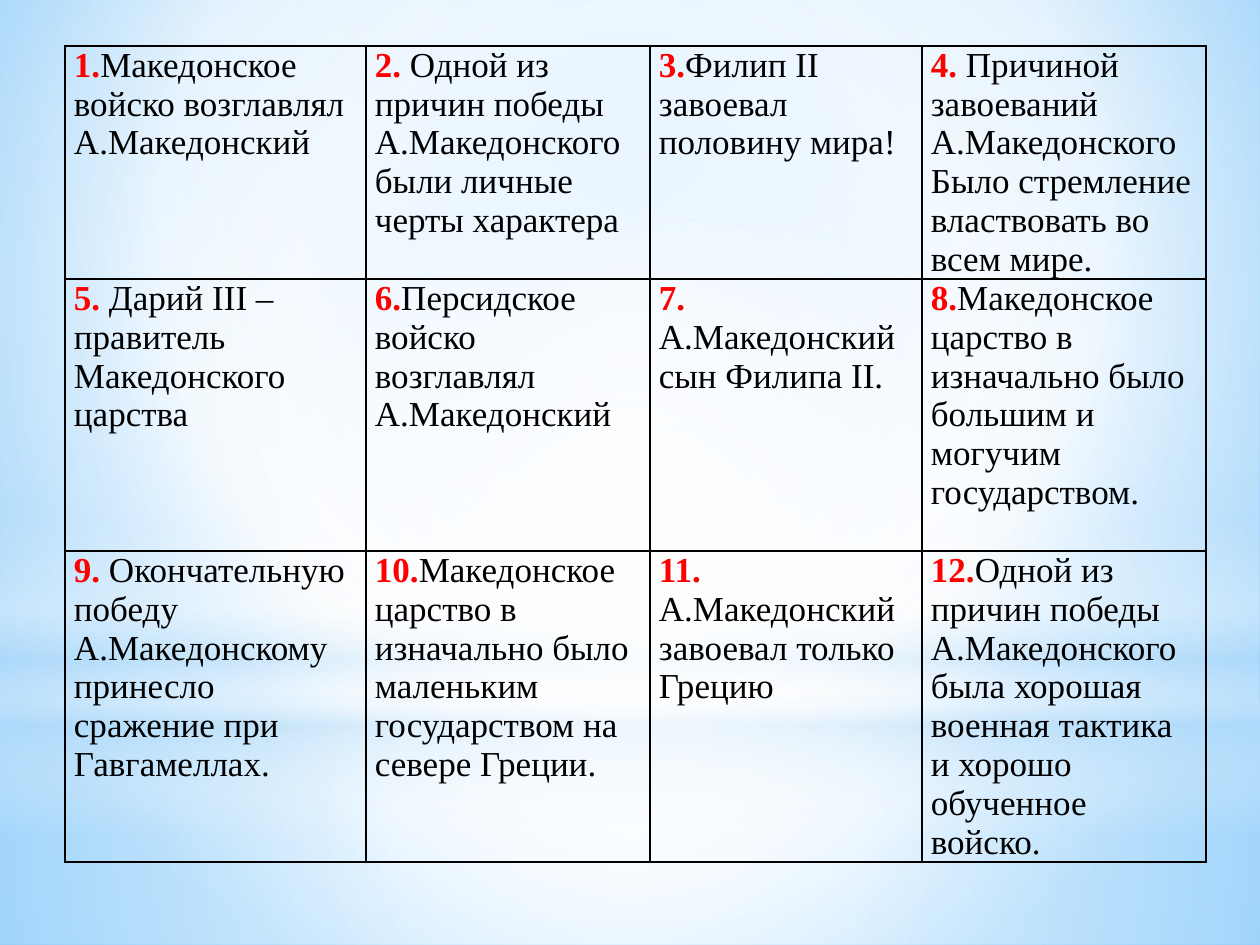
from lxml import etree
from pptx import Presentation
from pptx.dml.color import RGBColor
from pptx.enum.shapes import MSO_SHAPE
from pptx.oxml.ns import qn
from pptx.util import Pt

RECTANGLE = MSO_SHAPE.RECTANGLE
OVAL = MSO_SHAPE.OVAL
EMU_PER_PX = 914400 / 126
SLIDE_WIDTH, SLIDE_HEIGHT = 1260, 945

BLACK = RGBColor(0x00, 0x00, 0x00)
RED = RGBColor(0xFF, 0x00, 0x00)
WHITE = RGBColor(0xFF, 0xFF, 0xFF)
PALE_BLUE = RGBColor(0xB4, 0xDC, 0xFA)
LIGHT_BLUE = RGBColor(0x9E, 0xD5, 0xFF)
SKY_BLUE = RGBColor(0x5B, 0xB9, 0xFF)

CENTER = (50, 50, 50, 50)
COLUMN_WIDTHS = [301, 284, 272, 284]
ROW_HEIGHTS = [233, 272, 311]

# Each statement follows its number; a line break starts a new paragraph.
STATEMENTS = [
    "Македонское войско возглавлял А.Македонский",
    " Одной из причин победы А.Македонского были личные черты характера",
    "Филип II завоевал половину мира!",
    " Причиной завоеваний А.Македонского\nБыло стремление властвовать во всем мире.",
    " Дарий III – правитель Македонского царства",
    "Персидское войско возглавлял А.Македонский",
    "\nА.Македонский сын Филипа II.",
    "Македонское царство в изначально было большим и могучим государством.",
    " Окончательную победу А.Македонскому принесло сражение при Гавгамеллах.",
    "Македонское царство в изначально было маленьким государством на севере Греции.",
    " А.Македонский завоевал только Грецию",
    "Одной из причин победы А.Македонского была хорошая военная тактика и хорошо "
    "обученное войско.",
]


def px(length):
    return round(length * EMU_PER_PX)


def set_gradient(fill, element, stops, focus=None):
    """Stops are (position, colour, opacity) in percent; without a focus the gradient runs down."""
    fill.solid()
    solid = next(element.iter(qn("a:solidFill")))
    gradient = etree.Element(qn("a:gradFill"), rotWithShape="1")
    stop_list = etree.SubElement(gradient, qn("a:gsLst"))
    for position, color, opacity in stops:
        stop = etree.SubElement(stop_list, qn("a:gs"), pos=str(position * 1000))
        rgb = etree.SubElement(stop, qn("a:srgbClr"), val=str(color))
        if opacity < 100:
            etree.SubElement(rgb, qn("a:alpha"), val=str(opacity * 1000))
    if focus:
        path = etree.SubElement(gradient, qn("a:path"))
        path.set("path", "circle")
        sides = {side: str(value * 1000) for side, value in zip("ltrb", focus)}
        etree.SubElement(path, qn("a:fillToRect"), sides)
    else:
        etree.SubElement(gradient, qn("a:lin"), ang="5400000", scaled="0")
    solid.getparent().replace(solid, gradient)


class SlideBuilder:
    font_name = "Times New Roman"
    font_size = Pt(20)
    border_width = Pt(1)
    cell_margin = 9

    def __init__(self, slide):
        self.slide = slide

    def background(self, stops, focus):
        set_gradient(self.slide.background.fill, self.slide.element, stops, focus)

    def glow(self, kind, top, height, stops, focus=None):
        """Add a borderless gradient band as wide as the slide."""
        shape = self.slide.shapes.add_shape(kind, 0, px(top), px(SLIDE_WIDTH), px(height))
        shape.shadow.inherit = False
        set_gradient(shape.fill, shape.element, stops, focus)
        shape.line.fill.background()

    def table(self, left, top, column_widths, row_heights, statements):
        frame = self.slide.shapes.add_table(
            len(row_heights), len(column_widths), px(left), px(top),
            px(sum(column_widths)), px(sum(row_heights)))
        table = frame.table
        table.first_row = table.horz_banding = False
        for column, width in zip(table.columns, column_widths):
            column.width = px(width)
        for row, height in zip(table.rows, row_heights):
            row.height = px(height)
        for number, (cell, statement) in enumerate(zip(table.iter_cells(), statements), 1):
            self.cell(cell, number, statement)

    def cell(self, cell, number, statement):
        cell.margin_left = cell.margin_right = px(self.cell_margin)
        cell.margin_top = cell.margin_bottom = 0
        cell.fill.background()
        self.borders(cell)
        first, *others = statement.split("\n")
        paragraph = self.paragraph(cell.text_frame.paragraphs[0])
        self.run(paragraph, f"{number}.", RED, True)
        if first:
            self.run(paragraph, first, BLACK, False)
        for text in others:
            self.run(self.paragraph(cell.text_frame.add_paragraph()), text, BLACK, False)

    def paragraph(self, paragraph):
        paragraph.font.name = self.font_name
        paragraph.font.size = self.font_size
        return paragraph

    def run(self, paragraph, text, color, bold):
        run = paragraph.add_run()
        run.text = text
        run.font.name = self.font_name
        run.font.size = self.font_size
        run.font.color.rgb = color
        run.font.bold = bold

    def borders(self, cell):
        properties = cell._tc.get_or_add_tcPr()
        for index, side in enumerate("LRTB"):
            line = etree.Element(qn(f"a:ln{side}"), w=str(int(self.border_width)))
            solid = etree.SubElement(line, qn("a:solidFill"))
            etree.SubElement(solid, qn("a:srgbClr"), val=str(BLACK))
            properties.insert(index, line)


def main():
    presentation = Presentation()
    presentation.slide_width = px(SLIDE_WIDTH)
    presentation.slide_height = px(SLIDE_HEIGHT)
    builder = SlideBuilder(presentation.slides.add_slide(presentation.slide_layouts[6]))

    builder.background(
        [(0, LIGHT_BLUE, 100), (60, WHITE, 100), (100, SKY_BLUE, 100)], (20, 10, 20, 60))
    builder.glow(RECTANGLE, 703, 242,
                 [(0, WHITE, 91), (37, WHITE, 76), (100, PALE_BLUE, 79)], CENTER)
    builder.glow(RECTANGLE, 0, 703,
                 [(0, WHITE, 89), (48, WHITE, 62), (100, PALE_BLUE, 79)], CENTER)
    builder.glow(RECTANGLE, 519, 315,
                 [(0, WHITE, 0), (29, WHITE, 30), (45, PALE_BLUE, 40),
                  (55, WHITE, 26), (65, PALE_BLUE, 60), (100, WHITE, 0)])
    builder.glow(OVAL, 220, 703, [(0, WHITE, 100), (56, WHITE, 0)], CENTER)
    builder.table(65, 46, COLUMN_WIDTHS, ROW_HEIGHTS, STATEMENTS)

    presentation.save("out.pptx")


if __name__ == "__main__":
    main()
